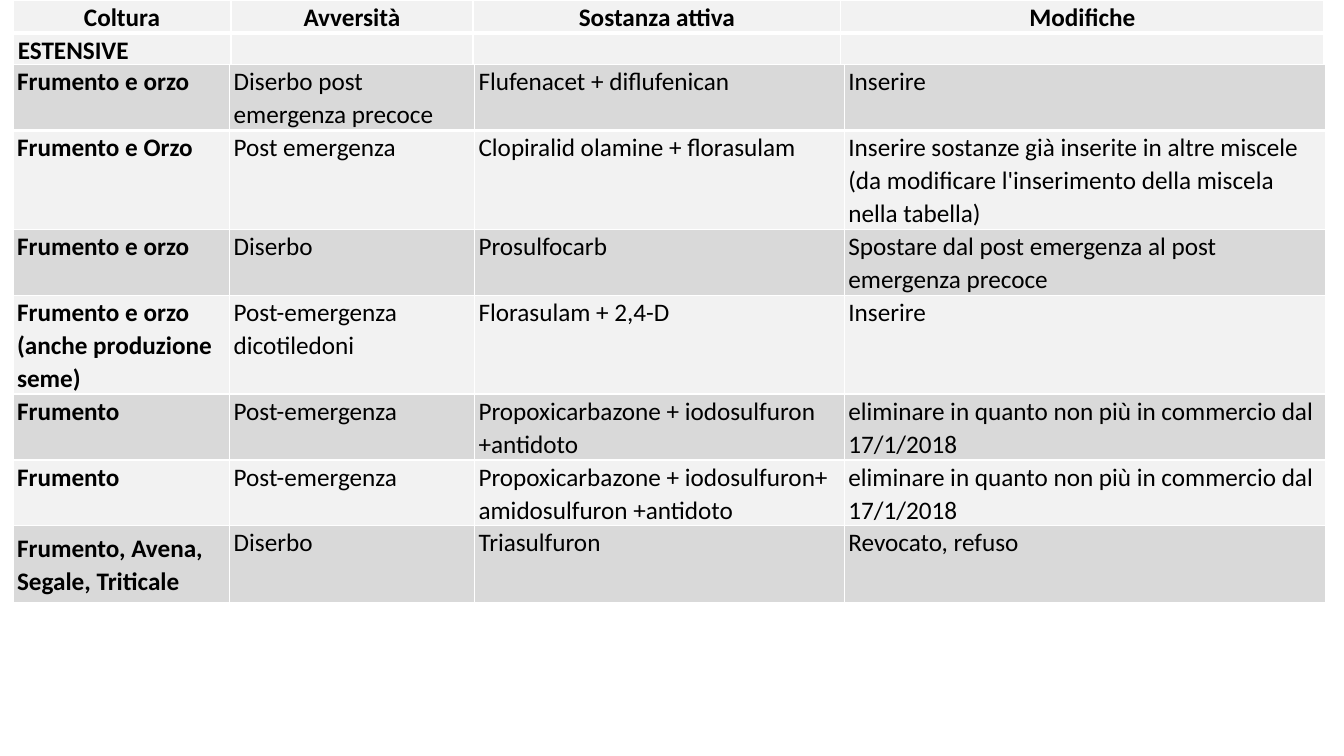
from lxml import etree
from pptx import Presentation
from pptx.dml.color import RGBColor
from pptx.enum.text import MSO_ANCHOR, PP_ALIGN
from pptx.oxml.ns import qn
from pptx.util import Cm, Pt

TOP, MIDDLE, BOTTOM = MSO_ANCHOR.TOP, MSO_ANCHOR.MIDDLE, MSO_ANCHOR.BOTTOM
LEFT, CENTER = PP_ALIGN.LEFT, PP_ALIGN.CENTER
LIGHT, DARK, WHITE, BLACK = "F2F2F2", "D9D9D9", "FFFFFF", "000000"

HEAD = [
    ("Coltura", "Avversità", "Sostanza attiva", "Modifiche"),
    ("ESTENSIVE", "", "", ""),
]
BODY = [
    ("Frumento e orzo", "Diserbo post emergenza precoce",
     "Flufenacet + diflufenican", "Inserire"),
    ("Frumento e Orzo", "Post emergenza", "Clopiralid olamine + florasulam",
     "Inserire sostanze già inserite in altre miscele "
     "(da modificare l'inserimento della miscela nella tabella)"),
    ("Frumento e orzo", "Diserbo", "Prosulfocarb",
     "Spostare dal post emergenza al post emergenza precoce"),
    ("Frumento e orzo (anche produzione seme)", "Post-emergenza dicotiledoni",
     "Florasulam + 2,4-D", "Inserire"),
    ("Frumento", "Post-emergenza", "Propoxicarbazone + iodosulfuron +antidoto",
     "eliminare in quanto non più in commercio dal 17/1/2018"),
    ("Frumento", "Post-emergenza",
     "Propoxicarbazone + iodosulfuron+ amidosulfuron +antidoto",
     "eliminare in quanto non più in commercio dal 17/1/2018"),
    ("Frumento, Avena, Segale, Triticale", "Diserbo", "Triasulfuron",
     "Revocato, refuso"),
]


def color(code):
    return RGBColor.from_string(code)


def set_edges(cell, base):
    """Draw white borders, 1 pt wide except for the bottom one of base pt."""
    props = cell._tc.get_or_add_tcPr()
    for spot, (side, width) in enumerate(zip("LRTB", (1, 1, 1, base))):
        line = etree.Element(qn(f"a:ln{side}"), w=str(Pt(width)))
        fill = etree.SubElement(line, qn("a:solidFill"))
        etree.SubElement(fill, qn("a:srgbClr"), val=WHITE)
        props.insert(spot, line)


def fill_cell(cell, text, shade, pad, bold, align=LEFT, anchor=TOP, base=1):
    cell.text_frame.text = text
    cell.margin_left = cell.margin_right = Cm(pad)
    cell.margin_top = cell.margin_bottom = 0
    cell.vertical_anchor = anchor
    cell.fill.solid()
    cell.fill.fore_color.rgb = color(shade)
    set_edges(cell, base)
    para = cell.text_frame.paragraphs[0]
    para.alignment = align
    para.line_spacing = 1.07
    for run in para.runs:
        run.font.name = "Calibri"
        run.font.size = Pt(18)
        run.font.bold = bold
        run.font.color.rgb = color(BLACK)


def add_grid(slide, left, top, widths, heights):
    frame = slide.shapes.add_table(len(heights), len(widths), Cm(left), Cm(top),
                                   Cm(sum(widths)), Cm(sum(heights)))
    grid = frame.table
    for col, width in zip(grid.columns, widths):
        col.width = Cm(width)
    for row, height in zip(grid.rows, heights):
        row.height = Cm(height)
    return grid


def add_head(slide, left, top):
    grid = add_grid(slide, left, top, (5.49, 6.1, 9.27, 12.17), (0.83, 0.8))
    for c, text in enumerate(HEAD[0]):
        fill_cell(grid.cell(0, c), text, LIGHT, 0.12, True, CENTER, base=3)
    for c, text in enumerate(HEAD[1]):
        fill_cell(grid.cell(1, c), text, LIGHT, 0.12, True, anchor=BOTTOM)


def add_body(slide, left, top):
    heights = (1.66, 2.49, 1.66, 2.49, 1.66, 1.66, 1.93)
    grid = add_grid(slide, left, top, (5.46, 6.17, 9.32, 12.12), heights)
    last = len(BODY) - 1
    for r, texts in enumerate(BODY):
        shade = LIGHT if r % 2 else DARK
        for c, text in enumerate(texts):
            anchor = MIDDLE if (r, c) == (last, 0) else TOP
            fill_cell(grid.cell(r, c), text, shade, 0.1, c == 0,
                      anchor=anchor, base=1 if r else 3)


def main():
    deck = Presentation()
    deck.slide_width, deck.slide_height = Cm(33.87), Cm(19.05)
    slide = deck.slides.add_slide(deck.slide_layouts[6])
    add_head(slide, 0.33, 0)
    add_body(slide, 0.33, 1.63)
    deck.save("out.pptx")


if __name__ == "__main__":
    main()
